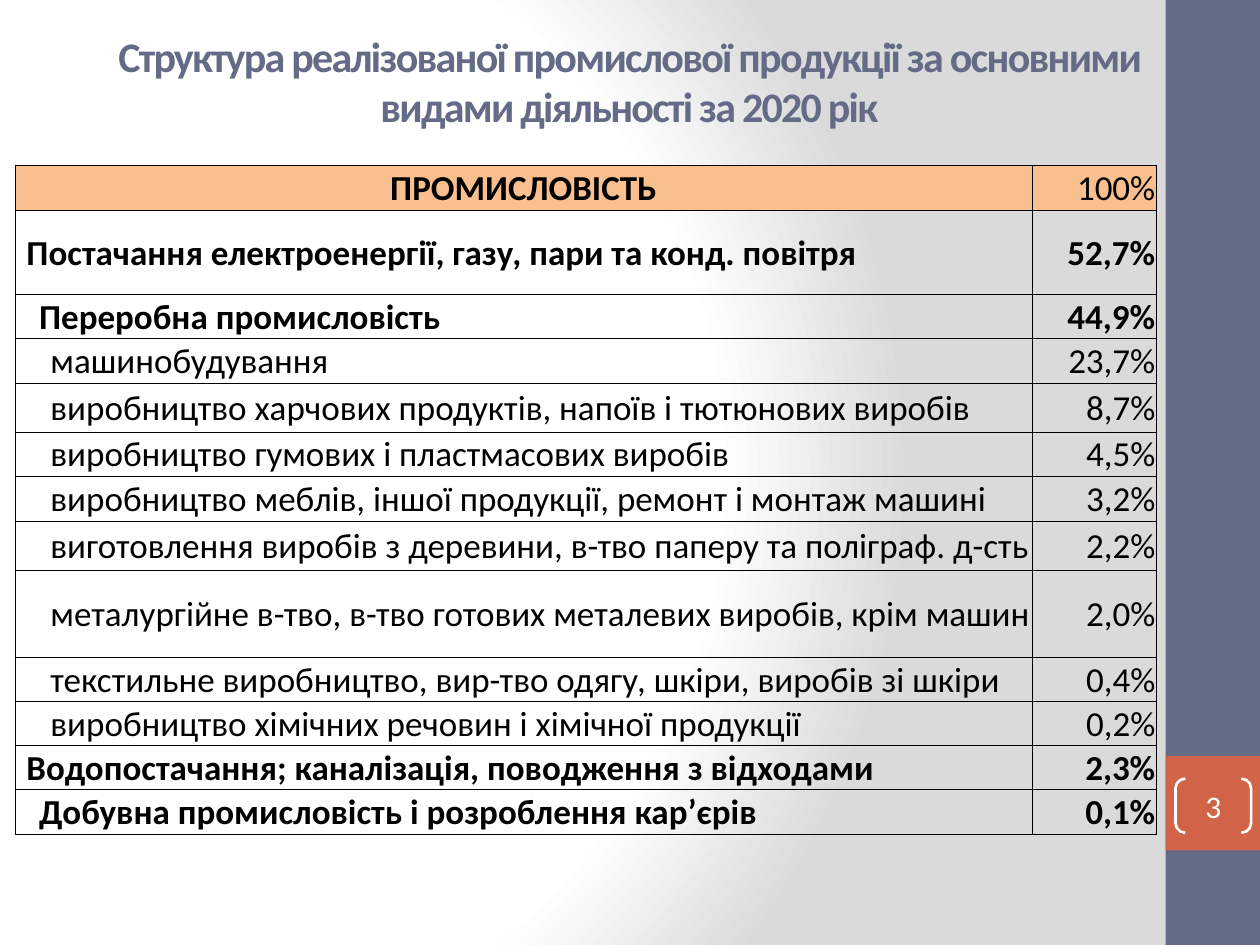
from lxml.etree import SubElement
from pptx import Presentation
from pptx.dml.color import RGBColor
from pptx.enum.shapes import MSO_SHAPE
from pptx.enum.text import MSO_ANCHOR, PP_ALIGN
from pptx.oxml import parse_xml
from pptx.oxml.ns import nsdecls, qn
from pptx.util import Inches, Pt

ROWS = [
    (0.36, 0, "ПРОМИСЛОВІСТЬ", "100%"),
    (0.67, 1, "Постачання електроенергії, газу, пари та конд. повітря", "52,7%"),
    (0.35, 2, "Переробна промисловість", "44,9%"),
    (0.35, 3, "машинобудування", "23,7%"),
    (0.39, 3, "виробництво харчових продуктів, напоїв і тютюнових виробів", "8,7%"),
    (0.35, 3, "виробництво гумових і пластмасових виробів", "4,5%"),
    (0.36, 3, "виробництво меблів, іншої продукції, ремонт і монтаж машині", "3,2%"),
    (0.39, 3, "виготовлення виробів з деревини, в-тво паперу та поліграф. д-сть", "2,2%"),
    (0.69, 3, "металургійне в-тво, в-тво готових металевих виробів, крім машин", "2,0%"),
    (0.35, 3, "текстильне виробництво, вир-тво одягу, шкіри, виробів зі шкіри", "0,4%"),
    (0.35, 3, "виробництво хімічних речовин і хімічної продукції", "0,2%"),
    (0.35, 1, "Водопостачання; каналізація, поводження з відходами", "2,3%"),
    (0.35, 2, "Добувна промисловість і розроблення кар’єрів", "0,1%"),
]
INDENTS = [0.01, 0.09, 0.19, 0.28]


def rgb(value):
    return RGBColor.from_string(value)


class Deck:
    """Holds the style and the current slide, measured on a grid of 100 columns by 75 rows."""

    font = "Calibri"
    slate, coral, peach = "646B86", "D16349", "FABF8F"
    black, white, grey = "000000", "FFFFFF", "DADADA"

    def __init__(self, width=10, height=7.5):
        self.prs = Presentation()
        self.prs.slide_width, self.prs.slide_height = Inches(width), Inches(height)
        self.s = self.prs.slides.add_slide(self.prs.slide_layouts[6])

    def box(self, x, y, w, h):
        col, row = self.prs.slide_width / 100, self.prs.slide_height / 75
        return [int(v) for v in (x * col, y * row, w * col, h * row)]

    def background(self, stops):
        gs = "".join(f'<a:gs pos="{pos * 1000}"><a:srgbClr val="{color}"/></a:gs>'
                     for pos, color in stops)
        bg = parse_xml(
            f'<p:bg {nsdecls("p", "a")}><p:bgPr><a:gradFill rotWithShape="1">'
            f'<a:gsLst>{gs}</a:gsLst><a:path path="circle">'
            '<a:fillToRect l="20000" t="50000" r="100000" b="50000"/></a:path>'
            '</a:gradFill><a:effectLst/></p:bgPr></p:bg>')
        self.s.shapes._spTree.getparent().insert(0, bg)

    def text(self, tf, text, size, color, align, bold=False, spacing=None):
        p = tf.paragraphs[0]
        p.alignment = align
        r = p.add_run()
        r.text = text
        values = {"name": self.font, "size": Pt(size), "bold": bold}
        for name, value in values.items():
            setattr(r.font, name, value)
        r.font.color.rgb = rgb(color)
        if spacing is not None:
            r._r.get_or_add_rPr().set("spc", str(spacing * 100))

    def frame(self, tf, inset):
        values = {"word_wrap": True, "vertical_anchor": MSO_ANCHOR.MIDDLE}
        values |= {f"margin_{side}": Inches(inset) for side in ("left", "right", "top", "bottom")}
        for name, value in values.items():
            setattr(tf, name, value)

    def title(self, text, *place):
        sp = self.s.shapes.add_textbox(*self.box(*place))
        self.frame(sp.text_frame, 0.05)
        self.text(sp.text_frame, text, 24, self.slate, PP_ALIGN.CENTER, True, -1)

    def panel(self, color, *place):
        sp = self.s.shapes.add_shape(MSO_SHAPE.RECTANGLE, *self.box(*place))
        sp.shadow.inherit = False
        sp.fill.solid()
        sp.fill.fore_color.rgb = rgb(color)
        sp.line.fill.background()

    def page_number(self, text, *place):
        sp = self.s.shapes.add_shape(MSO_SHAPE.DOUBLE_BRACKET, *self.box(*place))
        sp.shadow.inherit = False
        sp.adjustments[0] = 0.18
        sp.fill.background()
        sp.line.color.rgb = rgb(self.white)
        sp.line.width = Pt(1.5)
        self.frame(sp.text_frame, 0)
        self.text(sp.text_frame, text, 18, self.white, PP_ALIGN.CENTER)

    def cell(self, cell, text, align, bold, header, indent=0.01):
        values = {
            "margin_left": Inches(indent), "margin_right": Inches(0.01),
            "margin_top": Inches(0.01), "margin_bottom": 0,
            "vertical_anchor": MSO_ANCHOR.BOTTOM if header else MSO_ANCHOR.MIDDLE,
        }
        for name, value in values.items():
            setattr(cell, name, value)
        tcPr = cell._tc.get_or_add_tcPr()
        for side in ("lnL", "lnR", "lnT", "lnB"):
            ln = SubElement(tcPr, qn(f"a:{side}"), w=str(Pt(0.5)))
            fill = SubElement(ln, qn("a:solidFill"))
            SubElement(fill, qn("a:srgbClr"), val=self.black)
        if header:
            cell.fill.solid()
            cell.fill.fore_color.rgb = rgb(self.peach)
        else:
            cell.fill.background()
        self.text(cell.text_frame, text, 20, self.black, align, bold)

    def table(self, rows, widths, *place):
        shape = self.s.shapes.add_table(len(rows), len(widths), *self.box(*place))
        table = shape.table
        table.first_row = table.horz_banding = False
        for column, width in zip(table.columns, widths):
            column.width = Inches(width)
        for row, (height, level, label, share) in zip(table.rows, rows):
            row.height = Inches(height)
            header = level == 0
            align = PP_ALIGN.CENTER if header else PP_ALIGN.LEFT
            name, value = row.cells
            self.cell(name, label, align, level < 3, header, INDENTS[level])
            self.cell(value, share, PP_ALIGN.RIGHT, level in (1, 2), header)


def main():
    deck = Deck()
    deck.background([(0, deck.white), (75, deck.white), (100, deck.grey)])
    deck.panel(deck.slate, 92.5, 0, 7.5, 75)
    deck.panel(deck.coral, 92.5, 60, 7.5, 7.5)
    deck.title("Структура реалізованої промислової продукції за основними "
               "видами діяльності за 2020 рік", 8.3, 1.3, 83.3, 10.2)
    deck.page_number("3", 93.3, 61.8, 6, 4.3)
    deck.table(ROWS, [8.07, 0.99], 1.2, 13.1, 90.6, 53.1)
    deck.prs.save("out.pptx")


if __name__ == "__main__":
    main()
